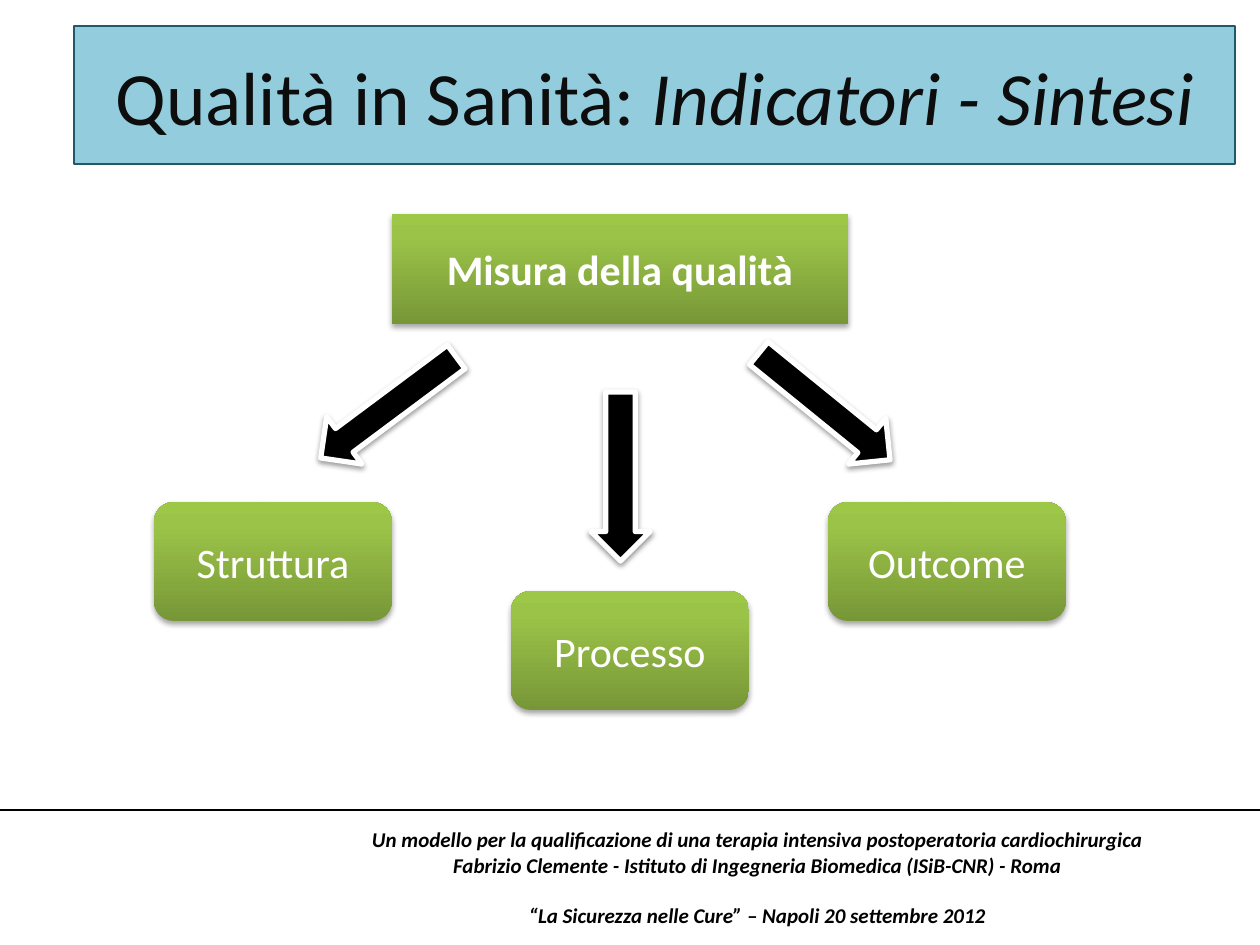
from copy import deepcopy
from dataclasses import dataclass

from lxml import etree
from pptx import Presentation
from pptx.dml.color import RGBColor
from pptx.enum import shapes, text
from pptx.oxml.ns import qn
from pptx.util import Emu, Pt

PX = 914400 // 126
FONT = "Calibri"
BLACK = RGBColor(0x00, 0x00, 0x00)
WHITE = RGBColor(0xFF, 0xFF, 0xFF)
INK = RGBColor(0x0D, 0x0D, 0x0D)
SKY = RGBColor(0x93, 0xCD, 0xDD)
TEAL = RGBColor(0x21, 0x59, 0x68)
GREEN_STOPS = (
    (0, RGBColor(0x77, 0x97, 0x37)),
    (0.8, RGBColor(0x9B, 0xC3, 0x48)),
    (1, RGBColor(0x9D, 0xC7, 0x46)),
)
RECTANGLE = shapes.MSO_SHAPE.RECTANGLE
ROUNDED = shapes.MSO_SHAPE.ROUNDED_RECTANGLE
ARROW_SIZE = (169, 59)
INDICATOR_SIZE = (238, 119)


@dataclass(frozen=True)
class Node:
    label: str
    left: int
    top: int
    width: int
    height: int
    kind: shapes.MSO_SHAPE = ROUNDED
    bold: bool = False


@dataclass(frozen=True)
class Arrow:
    left: int
    top: int
    rotation: float


NODES = (
    Node("Misura della qualità", 392, 214, 456, 110, RECTANGLE, True),
    Node("Struttura", 154, 502, *INDICATOR_SIZE),
    Node("Processo", 511, 591, *INDICATOR_SIZE),
    Node("Outcome", 828, 502, *INDICATOR_SIZE),
)
ARROWS = (Arrow(304, 378, 323.3), Arrow(536, 447, 270), Arrow(740, 377, 219.1))
FOOTER = (
    "Un modello per la qualificazione di una terapia intensiva "
    "postoperatoria cardiochirurgica",
    "Fabrizio Clemente - Istituto di Ingegneria Biomedica (ISiB-CNR) - Roma",
    "“La Sicurezza nelle Cure” – Napoli 20 settembre 2012",
)


def px(*lengths: int) -> list[Emu]:
    return [Emu(length * PX) for length in lengths]


def style_text(box, size: float, color: RGBColor, bold=False, italic=False) -> None:
    frame = box.text_frame
    frame.word_wrap = True
    frame.vertical_anchor = text.MSO_ANCHOR.MIDDLE
    for para in frame.paragraphs:
        para.alignment = text.PP_ALIGN.CENTER
        for span in para.runs:
            font = span.font
            font.name, font.size, font.color.rgb = FONT, Pt(size), color
            font.bold, font.italic = bold, italic


def add_shape(page, kind: shapes.MSO_SHAPE, left: int, top: int, width: int, height: int):
    shape = page.shapes.add_shape(kind, *px(left, top, width, height))
    shape.shadow.inherit = False
    return shape


def drop_shadow(shape, distance: float, opacity: int) -> None:
    effects = shape._element.spPr.find(qn("a:effectLst"))
    shadow = etree.SubElement(
        effects, qn("a:outerShdw"), blurRad=str(Pt(3.1)), dist=str(Pt(distance)),
        dir="5400000", rotWithShape="0",
    )
    color = etree.SubElement(shadow, qn("a:srgbClr"), val=str(BLACK))
    etree.SubElement(color, qn("a:alpha"), val=str(opacity * 1000))


def fill_green(shape) -> None:
    """Fill with the three-stop gradient, darkest at the bottom."""
    shape.fill.gradient()
    shape.fill.gradient_angle = 90
    stop_list = shape._element.spPr.find(qn("a:gradFill")).find(qn("a:gsLst"))
    stop_list.append(deepcopy(stop_list[-1]))
    for stop, (position, color) in zip(shape.fill.gradient_stops, GREEN_STOPS):
        stop.position, stop.color.rgb = position, color


def add_title(page) -> None:
    box = add_shape(page, RECTANGLE, 74, 26, 1161, 138)
    box.fill.solid()
    box.fill.fore_color.rgb = SKY
    box.line.color.rgb, box.line.width = TEAL, Pt(0.75)
    para = box.text_frame.paragraphs[0]
    for wording in ("Qualità in Sanità: ", "Indicatori - Sintesi"):
        para.add_run().text = wording
    style_text(box, 43, INK)
    para.runs[1].font.italic = True


def add_node(page, node: Node) -> None:
    box = add_shape(page, node.kind, node.left, node.top, node.width, node.height)
    fill_green(box)
    box.line.fill.background()
    drop_shadow(box, 1.8, 35)
    box.text_frame.text = node.label
    style_text(box, 24, WHITE, bold=node.bold)


def add_arrow(page, arrow: Arrow) -> None:
    shape = add_shape(page, shapes.MSO_SHAPE.LEFT_ARROW, arrow.left, arrow.top, *ARROW_SIZE)
    shape.rotation = arrow.rotation
    shape.fill.solid()
    shape.fill.fore_color.rgb = BLACK
    shape.line.color.rgb, shape.line.width = WHITE, Pt(3)
    drop_shadow(shape, 1.6, 38)


def add_footer(page) -> None:
    rule = page.shapes.add_connector(shapes.MSO_CONNECTOR.STRAIGHT, *px(0, 810, 1260, 810))
    rule.line.color.rgb, rule.line.width = BLACK, Pt(0.75)
    etree.SubElement(rule._element.spPr, qn("a:effectLst"))
    box = page.shapes.add_textbox(*px(343, 810, 829, 135))
    box.text_frame.text = "\n".join(FOOTER)
    style_text(box, 12, BLACK, bold=True, italic=True)
    box.text_frame.paragraphs[-1].space_before = Pt(14.6)


def main() -> None:
    deck = Presentation()
    deck.slide_width, deck.slide_height = px(1260, 945)
    page = deck.slides.add_slide(deck.slide_layouts[6])
    add_title(page)
    for node in NODES:
        add_node(page, node)
    for arrow in ARROWS:
        add_arrow(page, arrow)
    add_footer(page)
    deck.save("out.pptx")


if __name__ == "__main__":
    main()
